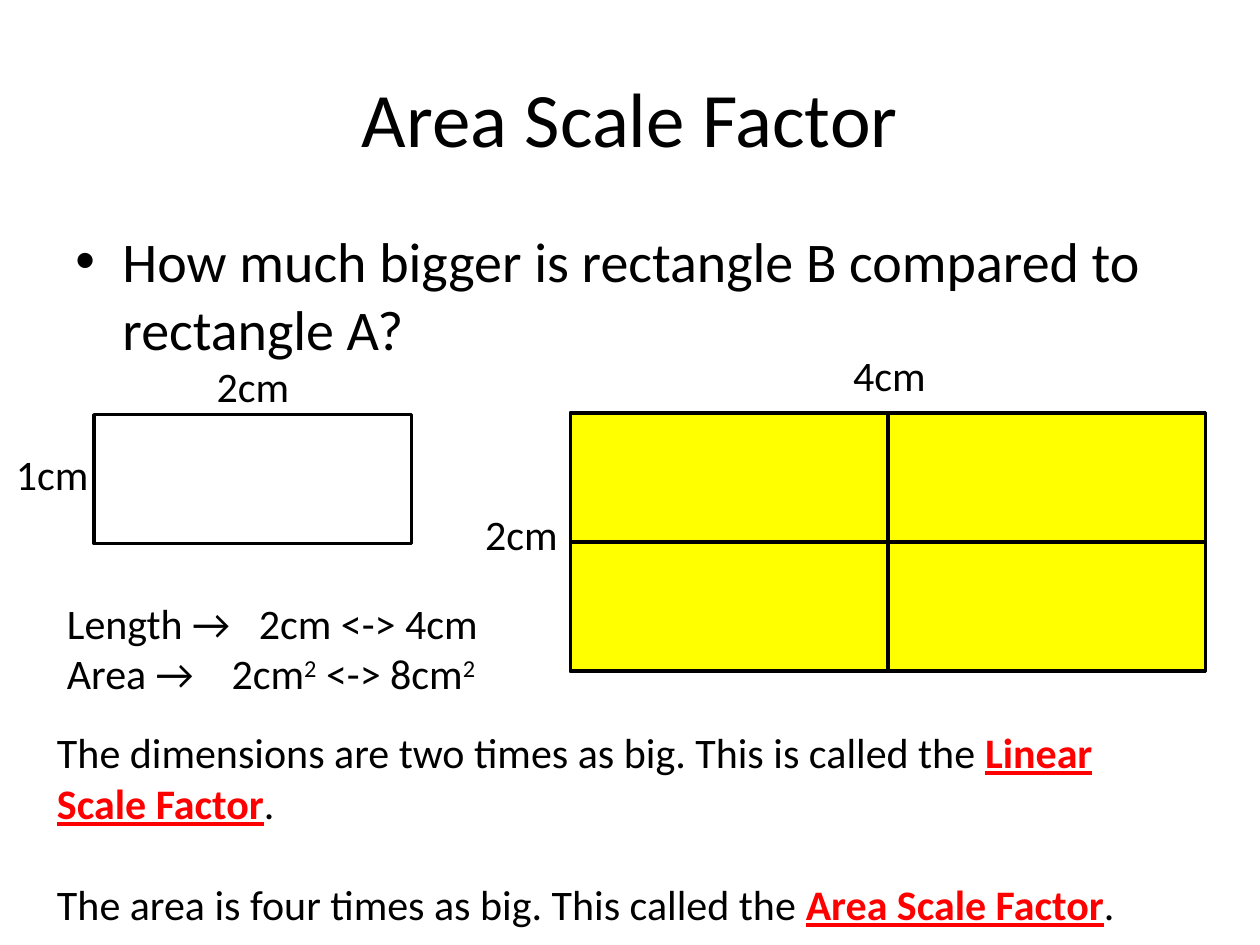
from dataclasses import dataclass
from lxml import etree
from pptx import Presentation
from pptx import util as u
from pptx.dml.color import RGBColor
from pptx.enum import shapes, text
from pptx.oxml.ns import qn

Cm, Pt = u.Cm, u.Pt
MID = text.PP_ALIGN.CENTER


@dataclass(frozen=True)
class Theme:
    font: str = "Calibri"
    ink: RGBColor = RGBColor(0, 0, 0)
    key: RGBColor = RGBColor(255, 0, 0)
    tint: RGBColor = RGBColor(255, 255, 0)
    head: int = 44
    lead: int = 32
    note: int = 24
    rule: int = 2


T = Theme()


def style(para, size, align=None):
    para.alignment = align
    for run in para.runs:
        font = run.font
        font.name, font.size = T.font, Pt(size)
        font.color.rgb = T.ink


def add_box(slide, box):
    frame = slide.shapes.add_textbox(*map(Cm, box)).text_frame
    frame.word_wrap = True
    return frame


def add_line(slide, box, words, size, align=None):
    frame = add_box(slide, box)
    frame.text = words
    style(frame.paragraphs[0], size, align)
    return frame


def add_runs(para, parts):
    for part in parts:
        para.add_run().text = part
    style(para, T.note)


def add_rect(slide, box, fill=None):
    rect = slide.shapes.add_shape(shapes.MSO_SHAPE.RECTANGLE, *map(Cm, box))
    rect.shadow.inherit = False
    if fill is None:
        rect.fill.background()
    else:
        rect.fill.solid()
        rect.fill.fore_color.rgb = fill
    rect.line.color.rgb = T.ink
    rect.line.width = Pt(T.rule)


def add_title(slide, box):
    frame = add_line(slide, box, "Area Scale Factor", T.head, MID)
    frame.vertical_anchor = text.MSO_ANCHOR.MIDDLE


def add_lead(slide, box):
    words = "How much bigger is rectangle B compared to rectangle A?"
    para = add_line(slide, box, words, T.lead).paragraphs[0]
    para.space_before = Pt(0.2 * T.lead)
    # Hanging bullet
    props = para._p.get_or_add_pPr()
    props.set("marL", str(Cm(0.95)))
    props.set("indent", str(-Cm(0.95)))
    etree.SubElement(props, qn("a:buFont"), typeface="Arial")
    etree.SubElement(props, qn("a:buChar"), char="•")


def add_grid(slide, box, count, fill=None):
    """Divide the box into count x count cells inside one outline."""
    x, y, w, h = box
    cw, ch = w / count, h / count
    for row in range(count):
        for col in range(count):
            add_rect(slide, (x + col * cw, y + row * ch, cw, ch), fill)
    if count > 1:
        add_rect(slide, box)


def add_sizes(slide, box, top, side):
    """Label a figure; top and side are (words, dx, dy, width)."""
    for words, dx, dy, wide in (top, side):
        spot = (box[0] + dx, box[1] + dy, wide, 1.28)
        add_line(slide, spot, words, T.note, MID)


def add_ratios(slide, box):
    frame = add_box(slide, box)
    rows = ((["Length →\t2cm <-> 4cm"], 3.87),
            (["Area →\t2cm", "2", " <-> 8cm", "2"], 3.32))
    for i, (parts, stop) in enumerate(rows):
        para = frame.add_paragraph() if i else frame.paragraphs[0]
        add_runs(para, parts)
        for run in para.runs[1::2]:
            run.font._element.set("baseline", "30000")
        # Tab stop that lines up the ratio
        tabs = etree.SubElement(para._p.get_or_add_pPr(), qn("a:tabLst"))
        etree.SubElement(tabs, qn("a:tab"), pos=str(Cm(stop)), algn="l")


def add_facts(slide, box):
    frame = add_box(slide, box)
    facts = (("The dimensions are two times as big. This is called the ",
              "Linear Scale Factor"),
             ("The area is four times as big. This called the ",
              "Area Scale Factor"))
    for i, (lead, term) in enumerate(facts):
        para = frame.add_paragraph() if i else frame.paragraphs[0]
        add_runs(para, (lead, term, "."))
        font = para.runs[1].font
        font.bold = font.underline = True
        font.color.rgb = T.key
        if i:
            para.space_before = Pt(1.22 * T.note)


def main():
    deck = Presentation()
    deck.slide_width, deck.slide_height = Cm(25.4), Cm(19.05)
    slide = deck.slides.add_slide(deck.slide_layouts[6])

    # Heading and question
    add_title(slide, (1.27, 0.76, 22.86, 3.18))
    add_lead(slide, (1.27, 4.45, 22.86, 12.57))

    # Rectangle A, and B at twice its size
    wide, high = 6.4, 2.6
    small = (1.9, 8.36, wide, high)
    large = (11.5, 8.33, 2 * wide, 2 * high)
    add_grid(slide, small, 1)
    add_grid(slide, large, 2, T.tint)
    add_sizes(slide, small, ("2cm", 1.4, -1.22, 3.6), ("1cm", -1.9, 0.56, 2.1))
    add_sizes(slide, large, ("4cm", 4.63, -1.4, 3.6), ("2cm", -2.79, 1.8, 3.6))

    # Findings
    add_ratios(slide, (1.1, 11.92, 9.2, 2.31))
    add_facts(slide, (0.9, 14.53, 23.2, 4.37))
    deck.save("out.pptx")


if __name__ == "__main__":
    main()
